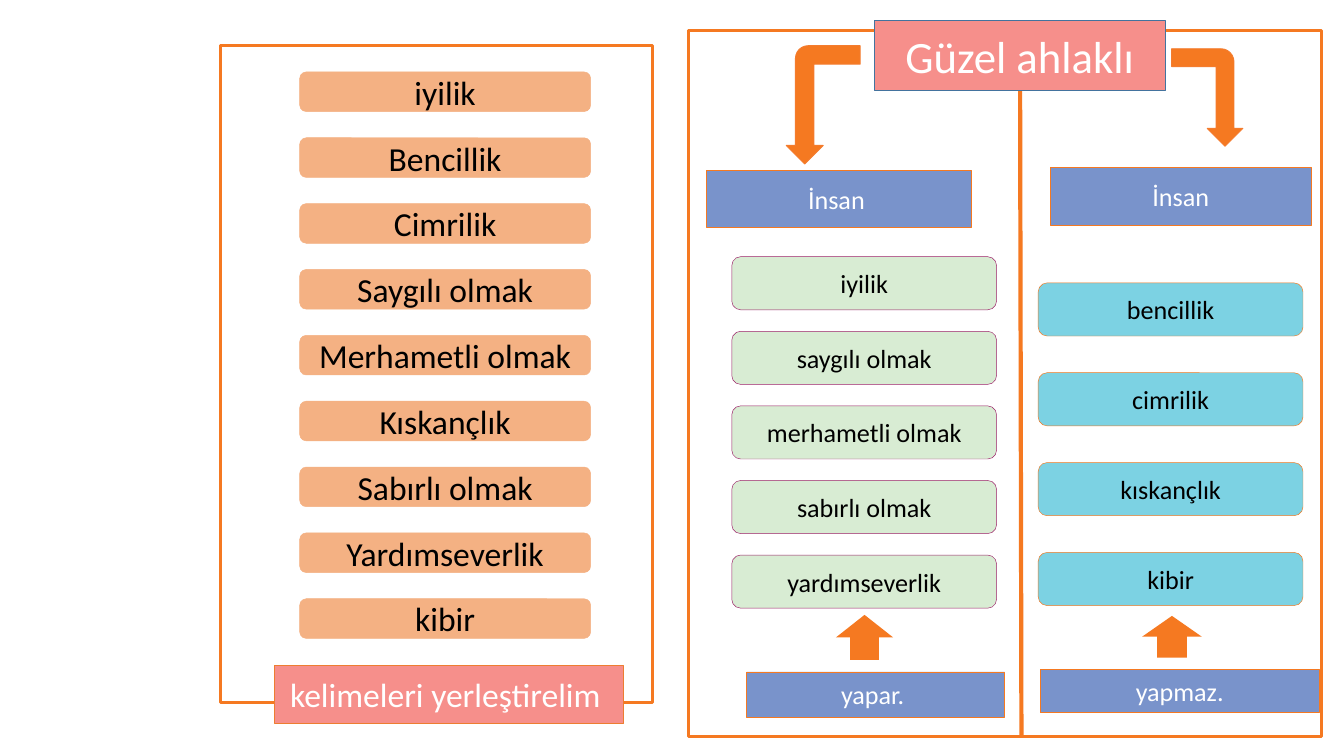
from lxml import etree
from pptx import Presentation
from pptx.dml.color import RGBColor
from pptx.enum import shapes, text
from pptx.oxml.ns import qn
from pptx.util import Inches, Pt

ORANGE, ARROW_EDGE, PEACH = "F57921", "F47C2E", "F4B183"
CORAL, BLUE, GREEN, CYAN = "F68F8B", "7993CB", "D8ECD3", "7CD2E3"
WHITE, BLACK = "FFFFFF", "000000"
KIND = shapes.MSO_SHAPE


def rgb(value):
    return RGBColor.from_string(value)


def paint(sp, fill=None, line=None, width=1):
    if fill:
        sp.fill.solid()
        sp.fill.fore_color.rgb = rgb(fill)
    else:
        sp.fill.background()
    if line:
        sp.line.color.rgb = rgb(line)
        sp.line.width = Pt(width)
    else:
        sp.line.fill.background()


def write(sp, words, size, color):
    tf = sp.text_frame
    tf.word_wrap = True
    tf.auto_size = text.MSO_AUTO_SIZE.NONE
    tf.vertical_anchor = text.MSO_ANCHOR.MIDDLE
    p = tf.paragraphs[0]
    p.text = words
    p.alignment = text.PP_ALIGN.CENTER
    p.font.name = "Calibri"
    p.font.size = Pt(size)
    p.font.color.rgb = rgb(color)


def add_box(s, kind, x, y, w, h, fill=None, line=None, width=1):
    sp = s.shapes.add_shape(kind, Inches(x), Inches(y), Inches(w), Inches(h))
    sp.shadow.inherit = False
    paint(sp, fill, line, width)
    return sp


def add_label(s, x, y, w, h, words, fill=BLUE, line=ORANGE, size=28):
    sp = add_box(s, KIND.RECTANGLE, x, y, w, h, fill, line)
    write(sp, words, size, WHITE)


def add_cards(s, x, y, w, h, step, words, fill, line, size=28):
    """Stack equal rounded cards downwards at a fixed step."""
    for i, word in enumerate(words):
        sp = add_box(s, KIND.ROUNDED_RECTANGLE, x, y + i * step, w, h, fill, line, 0.5)
        write(sp, word, size, BLACK)


def add_up_arrow(s, x, y, w, h):
    sp = add_box(s, KIND.RIGHT_ARROW, x, y, w, h, ORANGE)
    sp.rotation = 270


def add_bent_arrow(s, x, y, w, h, bend, flip=False):
    sp = add_box(s, KIND.BENT_ARROW, x, y, w, h, ORANGE, ARROW_EDGE)
    sp.adjustments[3] = bend
    sp.rotation = 90
    if flip:
        sp._element.spPr.find(qn("a:xfrm")).set("flipV", "1")


def add_divider(s, x1, y1, x2, y2):
    line = s.shapes.add_connector(shapes.MSO_CONNECTOR.STRAIGHT,
                                  Inches(x1), Inches(y1), Inches(x2), Inches(y2))
    line.line.color.rgb = rgb(ORANGE)
    line.line.width = Pt(4.5)
    etree.SubElement(line._element.spPr, qn("a:effectLst"))


def word_bank(s, x, y, w, h):
    add_box(s, KIND.RECTANGLE, x, y, w, h, line=ORANGE, width=3)
    words = ["iyilik", "Bencillik", "Cimrilik", "Saygılı olmak", "Merhametli olmak",
             "Kıskançlık", "Sabırlı olmak", "Yardımseverlik", "kibir"]
    add_cards(s, x + 1.18, y + 0.39, 4.33, 0.59, 0.98, words, PEACH, PEACH, 36)
    add_label(s, x + 0.81, y + 9.22, 5.19, 0.87, "kelimeleri yerleştirelim ",
              CORAL, "ED7D31", 36)


def does_column(s, x, y):
    add_bent_arrow(s, x + 1.12, y + 0.55, 1.76, 1.1, 0.171, flip=True)
    add_label(s, x + 0.27, y + 2.08, 3.94, 0.84, "İnsan ")
    words = ["iyilik", "saygılı olmak", "merhametli olmak", "sabırlı olmak",
             "yardımseverlik"]
    add_cards(s, x + 0.64, y + 3.36, 3.94, 0.79, 1.11, words, GREEN, "9C2068")
    add_up_arrow(s, x + 2.28, y + 8.6, 0.67, 0.85)
    add_label(s, x + 0.86, y + 9.54, 3.84, 0.67, "yapar. ")


def does_not_column(s, x, y):
    add_bent_arrow(s, x + 2.06, y + 0.46, 1.45, 1.06, 0.184)
    add_label(s, x + 0.45, y + 2.03, 3.88, 0.86, "İnsan")
    words = ["bencillik", "cimrilik", "kıskançlık", "kibir"]
    add_cards(s, x + 0.27, y + 3.75, 3.94, 0.79, 1.337, words, CYAN, ORANGE)
    add_up_arrow(s, x + 1.95, y + 8.57, 0.62, 0.89)
    add_label(s, x + 0.3, y + 9.51, 4.15, 0.64, "yapmaz.")


def heading(s, x, y, w, h):
    title = s.shapes.title
    title.left, title.top, title.width, title.height = map(Inches, (x, y, w, h))
    paint(title, CORAL, "43739E")
    write(title, "Güzel ahlaklı", 48, WHITE)
    s.shapes._spTree.append(title._element)  # bring in front of frame and divider


def sorting_board(s, x, y, w, h):
    add_divider(s, x + 4.93, y + 0.77, x + 4.95, y + h - 0.02)
    add_box(s, KIND.RECTANGLE, x, y, w, h, line=ORANGE, width=3)
    does_column(s, x, y)
    does_not_column(s, x + 4.93, y)
    heading(s, x + 2.76, y - 0.15, 4.33, 1.04)


def main():
    prs = Presentation()
    prs.slide_width, prs.slide_height = Inches(20), Inches(11.25)
    s = prs.slides.add_slide(prs.slide_layouts[5])  # Title Only
    word_bank(s, 3.28, 0.68, 6.43, 9.78)
    sorting_board(s, 10.25, 0.46, 9.42, 10.5)
    prs.save("out.pptx")


if __name__ == "__main__":
    main()
